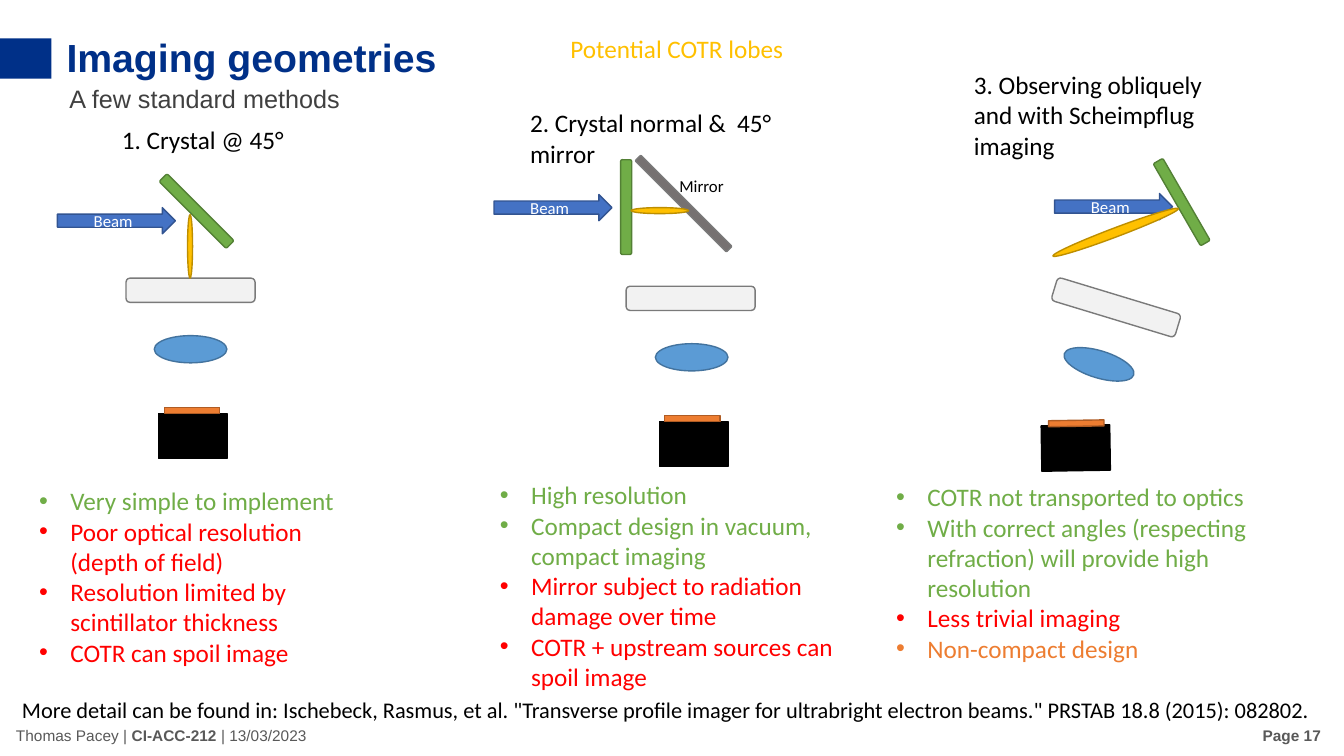
"""Build the slide comparing three imaging geometries."""
import dataclasses

import pptx
import pptx.dml.color
import pptx.enum.shapes
import pptx.enum.text
import pptx.oxml.ns
import pptx.util
from lxml import etree

SHAPE = pptx.enum.shapes.MSO_SHAPE
ALIGN = pptx.enum.text.PP_ALIGN
ANCHOR = pptx.enum.text.MSO_ANCHOR


@dataclasses.dataclass(frozen=True)
class Theme:
    """Colours, fonts, type sizes and grid of the slide."""
    navy: str = "003088"
    charcoal: str = "404040"
    grey: str = "595959"
    black: str = "000000"
    white: str = "FFFFFF"
    green: str = "70AD47"
    red: str = "FF0000"
    orange: str = "ED7D31"
    gold: str = "FFC000"
    crystal: tuple = ("70AD47", "538035")
    lens: tuple = ("5B9BD5", "43739E")
    camera: tuple = ("000000", "000000")
    sensor: tuple = ("ED7D31", "AF5C24")
    window: tuple = ("F2F2F2", "7A7A7A")
    mirror: tuple = ("767171", "7A7A7A")
    beam: tuple = ("4472C4", "325491")
    lobe: tuple = ("FFC000", "BD8E00")
    heading_font: str = "Arial"
    body_font: str = "Calibri"
    title: int = 28
    body: int = 18
    note: int = 16
    label: int = 12
    footer: int = 11
    columns: float = 133.3
    rows: float = 75
    cell: float = 0.1


class Slide:
    """Holds the theme and the current page and draws each kind of element."""

    def __init__(self, deck, theme):
        """Size the deck and add a title-only page."""
        self.theme = theme
        deck.slide_width = self.length(theme.columns)
        deck.slide_height = self.length(theme.rows)
        self.page = deck.slides.add_slide(deck.slide_layouts[5])

    def length(self, cells):
        """Turn grid cells into a length."""
        return pptx.util.Inches(cells * self.theme.cell)

    def area(self, column, row, width, height):
        """Turn a grid area into four lengths."""
        return [self.length(cells) for cells in (column, row, width, height)]

    def style(self, span, size, colour, font=None, bold=False):
        """Format one run of text."""
        span.font.size = pptx.util.Pt(size)
        span.font.name = font or self.theme.body_font
        span.font.bold = bold
        span.font.color.rgb = pptx.dml.color.RGBColor.from_string(colour)

    def title(self, area, words):
        """Move, fill and format the title placeholder."""
        box = self.page.shapes.title
        box.left, box.top, box.width, box.height = self.area(*area)
        frame = box.text_frame
        frame.text = words
        frame.word_wrap = False
        frame.auto_size = pptx.enum.text.MSO_AUTO_SIZE.NONE
        frame.vertical_anchor = ANCHOR.TOP
        para = frame.paragraphs[0]
        para.alignment = ALIGN.LEFT
        self.style(para.runs[0], self.theme.title, self.theme.navy, self.theme.heading_font, True)

    def frame(self, area, anchor=ANCHOR.TOP):
        """Add a wrapping text box and return its frame."""
        frame = self.page.shapes.add_textbox(*self.area(*area)).text_frame
        frame.word_wrap = True
        frame.vertical_anchor = anchor
        return frame

    def text(self, area, words, size=None, colour=None, font=None):
        """Add a text box with one plain paragraph."""
        para = self.frame(area).paragraphs[0]
        para.text = words
        self.style(para.runs[0], size or self.theme.body, colour or self.theme.black, font)

    def footer(self, area, spans, alignment=ALIGN.LEFT):
        """Add a footer line of plain and bold spans."""
        para = self.frame(area, ANCHOR.MIDDLE).paragraphs[0]
        para.alignment = alignment
        for words, bold in spans:
            span = para.add_run()
            span.text = words
            self.style(span, self.theme.footer, self.theme.grey, self.theme.heading_font, bold)

    def bullets(self, area, items):
        """Add a bulleted list of words and colours."""
        frame = self.frame(area)
        frame.text = "\n".join(words for words, _ in items)
        for para, (_, colour) in zip(frame.paragraphs, items):
            self.style(para.runs[0], self.theme.body, colour)
            properties = para._p.get_or_add_pPr()
            indent = self.length(3.1)
            properties.set("marL", str(indent))
            properties.set("indent", str(-indent))
            bullet_font = etree.SubElement(properties, pptx.oxml.ns.qn("a:buFont"))
            bullet_font.set("typeface", self.theme.heading_font)
            etree.SubElement(properties, pptx.oxml.ns.qn("a:buChar")).set("char", "•")

    def shape(self, kind, area, colours, turn=0):
        """Add a filled, outlined and turned preset shape."""
        shape = self.page.shapes.add_shape(kind, *self.area(*area))
        fill, line = colours
        shape.shadow.inherit = False
        shape.rotation = turn
        shape.fill.solid()
        shape.fill.fore_color.rgb = pptx.dml.color.RGBColor.from_string(fill)
        if line:
            shape.line.color.rgb = pptx.dml.color.RGBColor.from_string(line)
            shape.line.width = pptx.util.Pt(1)
        else:
            shape.line.fill.background()
        return shape

    def beam(self, column, row):
        """Add a labelled beam arrow."""
        arrow = self.shape(SHAPE.RIGHT_ARROW, (column, row, 11.7, 2.6), self.theme.beam)
        frame = arrow.text_frame
        frame.text = "Beam"
        frame.vertical_anchor = ANCHOR.MIDDLE
        para = frame.paragraphs[0]
        para.alignment = ALIGN.CENTER
        self.style(para.runs[0], self.theme.label, self.theme.white)

    def setup(self, beam, crystal, window, lens, camera, sensor, turns):
        """Draw one imaging line from beam to camera."""
        theme = self.theme
        crystal_turn, optics_turn, camera_turn = turns
        self.beam(*beam)
        self.shape(SHAPE.ROUNDED_RECTANGLE, (*crystal, 9.4, 1.1), theme.crystal, crystal_turn)
        self.shape(SHAPE.ROUNDED_RECTANGLE, (*window, 12.8, 2.4), theme.window, optics_turn)
        self.shape(SHAPE.OVAL, (*lens, 7.2, 2.7), theme.lens, optics_turn)
        self.shape(SHAPE.RECTANGLE, (*camera, 6.8, 4.5), theme.camera, camera_turn)
        self.shape(SHAPE.RECTANGLE, (*sensor, 5.5, 0.6), theme.sensor, camera_turn)


def main():
    """Compose and save the slide."""
    deck = pptx.Presentation()
    theme = Theme()
    slide = Slide(deck, theme)
    good, bad = theme.green, theme.red

    slide.title((5.6, 2.8, 39.1, 5.7), "Imaging geometries")
    slide.shape(SHAPE.RECTANGLE, (0, 3.8, 5.1, 4), (theme.navy, None))
    slide.text((5.9, 7.8, 32, 4), "A few standard methods", theme.body, theme.charcoal, theme.heading_font)

    headings = [
        ((11.1, 11.8, 21.6, 4), "1. Crystal @ 45°"),
        ((51.6, 10.2, 32, 7.1), "2. Crystal normal &  45° mirror"),
        ((95.6, 6.4, 29, 10.1), "3. Observing obliquely and with Scheimpflug imaging"),
    ]
    for area, words in headings:
        slide.text(area, words)

    setups = [
        ((5.7, 20.6), (14.8, 20.4), (12.5, 27.6), (15.3, 33.3), (15.7, 41), (16.3, 40.4), (45, 0, 0)),
        ((49, 19.3), (57.4, 20), (62.1, 28.4), (65, 34.1), (65.4, 41.8), (65.9, 41.2), (90, 0, 0)),
        ((104.6, 19.2), (112.5, 19.5), (104.3, 29.3), (105.4, 34.8), (103.3, 42.2), (104, 41.7),
         (60, 16.9, 359.1)),
    ]
    for places in setups:
        slide.setup(*places)
    slide.shape(SHAPE.ROUNDED_RECTANGLE, (61.4, 19.8, 12.8, 0.8), theme.mirror, 45)
    slide.text((66.4, 16.9, 8.3, 6.1), "Mirror", theme.label)

    lobes = [((18.6, 21.3, 0.5, 6.3), 0), ((62.6, 20.6, 5.7, 0.6), 0), ((104, 22.6, 13.3, 0.9), 339.3)]
    for area, turn in lobes:
        slide.shape(SHAPE.OVAL, area, theme.lobe, turn)
    slide.text((55.6, 2.8, 24.4, 4), "Potential COTR lobes", theme.body, theme.gold)

    slide.bullets((2.9, 47.7, 34, 19.2), [
        ("Very simple to implement", good),
        ("Poor optical resolution (depth of field)", bad),
        ("Resolution limited by scintillator thickness", bad),
        ("COTR can spoil image", bad)])
    slide.bullets((48.6, 47.1, 37.6, 22.2), [
        ("High resolution", good),
        ("Compact design in vacuum, compact imaging", good),
        ("Mirror subject to radiation damage over time", bad),
        ("COTR + upstream sources can spoil image", bad)])
    slide.bullets((87.9, 47.3, 37.6, 19.2), [
        ("COTR not transported to optics", good),
        ("With correct angles (respecting refraction) will provide high resolution", good),
        ("Less trivial imaging", bad),
        ("Non-compact design", theme.orange)])

    slide.text((1.2, 68.6, 132.3, 3.7), "More detail can be found in: Ischebeck, Rasmus, et al. "
               '"Transverse profile imager for ultrabright electron beams." PRSTAB 18.8 (2015): 082802.',
               theme.note)
    slide.footer((0.6, 71, 40.5, 4), [("Thomas Pacey | ", False), ("CI-ACC-212 ", True), ("| 13/03/2023", False)])
    slide.footer((102, 71, 30, 4), [("Page 17", True)], ALIGN.RIGHT)
    deck.save("out.pptx")


if __name__ == "__main__":
    main()
